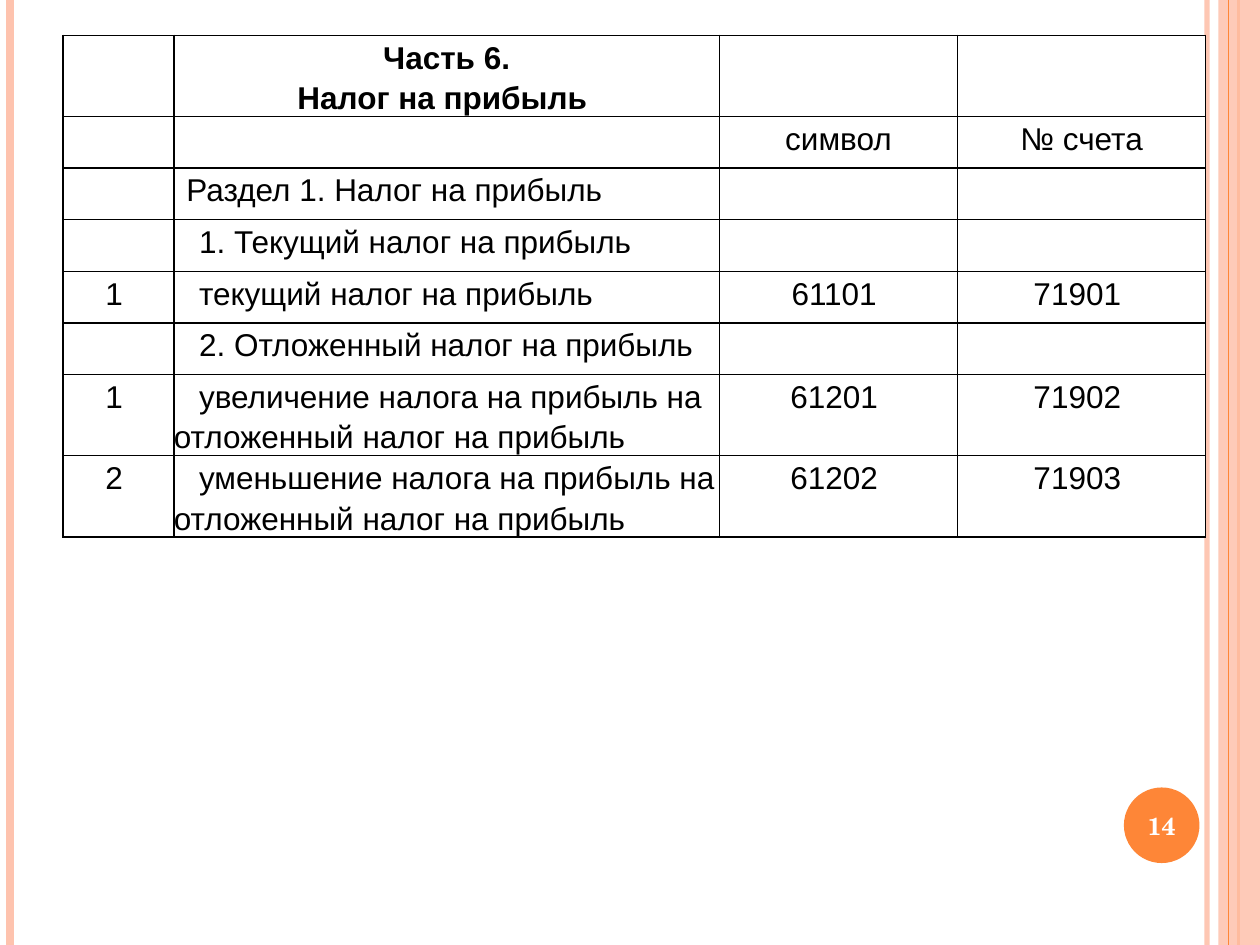
from lxml import etree
from pptx import Presentation
from pptx import util as u
from pptx.dml.color import RGBColor
from pptx.enum import shapes, text
from pptx.oxml.ns import qn

BLACK = RGBColor(0x00, 0x00, 0x00)
WHITE = RGBColor(0xFF, 0xFF, 0xFF)
PEACH = RGBColor(0xFE, 0xC3, 0xAE)
ORANGE = RGBColor(0xFE, 0x86, 0x37)

WIDTH, HEIGHT = u.Inches(10), u.Inches(7.5)
COLUMNS = (0.88, 4.33, 1.89, 1.97)
ROW_HEIGHT = 0.41
# Each row: number, name, first-line indent of the name (None = heading), symbol, account
ROWS = (
    ("", "Часть 6.\nНалог на прибыль ", None, "", ""),
    ("", "", 0, "символ", "№ счета"),
    ("", "Раздел 1. Налог на прибыль", 0.1, "", ""),
    ("", "1. Текущий налог на прибыль", 0.2, "", ""),
    ("1 ", "текущий налог на прибыль", 0.2, "61101 ", "71901 "),
    ("", "2. Отложенный налог на прибыль", 0.2, "", ""),
    ("1 ", "увеличение налога на прибыль на отложенный налог на прибыль", 0.2,
     "61201 ", "71902 "),
    ("2 ", "уменьшение налога на прибыль на отложенный налог на прибыль", 0.2,
     "61202 ", "71903 "),
)


def set_alpha(element, percent):
    """Make the first solid colour inside the element partly transparent."""
    clr = next(element.iter(qn("a:srgbClr")))
    etree.SubElement(clr, qn("a:alpha")).set("val", str(percent * 1000))


def add_stripe(s, x, color, width, alpha=None):
    """Draw a vertical line over the full slide height, x inches from the left."""
    line = s.shapes.add_connector(
        shapes.MSO_CONNECTOR.STRAIGHT, u.Inches(x), 0, u.Inches(x), HEIGHT)
    line.line.color.rgb = color
    line.line.width = u.Pt(width)
    props = line._element.spPr
    if alpha:
        set_alpha(props, alpha)
    etree.SubElement(props, qn("a:effectLst"))


def add_solid(s, kind, left, top, width, height, color):
    sp = s.shapes.add_shape(kind, left, top, width, height)
    sp.shadow.inherit = False
    sp.fill.solid()
    sp.fill.fore_color.rgb = color
    sp.line.fill.background()
    return sp


def add_side_stripes(s):
    add_stripe(s, 9.58, PEACH, 3, alpha=93)
    add_stripe(s, 0.08, PEACH, 4.5)
    add_stripe(s, 9.83, ORANGE, 1.5)
    band = add_solid(s, shapes.MSO_SHAPE.RECTANGLE,
                     u.Inches(9.67), 0, u.Inches(0.33), HEIGHT, PEACH)
    set_alpha(band._element.spPr, 87)
    add_stripe(s, 9.75, ORANGE, 0.75)


def add_page_number(s, left, top, size, number):
    """Place a round badge with the slide number centred on it."""
    add_solid(s, shapes.MSO_SHAPE.OVAL, left, top, size, size, ORANGE)
    margin = u.Inches(0.03)
    box = s.shapes.add_textbox(left - margin, top + margin // 2,
                               size + 2 * margin, size - margin)
    tf = box.text_frame
    tf.word_wrap = True
    tf.vertical_anchor = text.MSO_ANCHOR.MIDDLE
    p = tf.paragraphs[0]
    p.text = number
    p.alignment = text.PP_ALIGN.CENTER
    format_font(p.font, "TeX Gyre Schola", 14, WHITE, True)


def format_font(font, name, size, color, bold):
    font.name, font.size, font.bold = name, u.Pt(size), bold
    font.color.rgb = color


def add_borders(cell):
    """Give a cell a thin black border; must run before the cell is filled."""
    props = cell._tc.get_or_add_tcPr()
    for side in ("a:lnL", "a:lnR", "a:lnT", "a:lnB"):
        ln = etree.SubElement(props, qn(side), w=str(u.Pt(1)))
        fill = etree.SubElement(ln, qn("a:solidFill"))
        etree.SubElement(fill, qn("a:srgbClr"), val=str(BLACK))


def fill_cell(cell, content, indent=None):
    """Write a cell: centred without an indent, else left with that first-line indent."""
    add_borders(cell)
    cell.fill.solid()
    cell.fill.fore_color.rgb = WHITE
    cell.margin_left = cell.margin_right = cell.margin_top = cell.margin_bottom = 0
    cell.text = content
    for p in cell.text_frame.paragraphs:
        p.line_spacing = 1.15
        if indent is None:
            p.alignment = text.PP_ALIGN.CENTER
        else:
            p.alignment = text.PP_ALIGN.LEFT
            p._p.get_or_add_pPr().set("indent", str(u.Inches(indent)))
        format_font(p.font, "Arial", 18, BLACK, False)


def add_tax_table(s, left, top):
    table = s.shapes.add_table(
        len(ROWS), len(COLUMNS), left, top,
        u.Inches(sum(COLUMNS)), u.Inches(ROW_HEIGHT * len(ROWS))).table
    table.first_row = table.horz_banding = False
    for column, width in zip(table.columns, COLUMNS):
        column.width = u.Inches(width)
    for row, (number, name, indent, symbol, account) in zip(table.rows, ROWS):
        row.height = u.Inches(ROW_HEIGHT)
        for cell, content in zip(row.cells, (number, name, symbol, account)):
            fill_cell(cell, content, indent if content == name else None)
    for p in table.cell(0, 1).text_frame.paragraphs:
        p.font.bold = True


def main():
    prs = Presentation()
    prs.slide_width, prs.slide_height = WIDTH, HEIGHT
    s = prs.slides.add_slide(prs.slide_layouts[6])
    add_side_stripes(s)
    add_tax_table(s, u.Inches(0.5), u.Inches(0.28))
    add_page_number(s, u.Inches(8.92), u.Inches(6.25), u.Inches(0.6), "14")
    prs.save("out.pptx")


if __name__ == "__main__":
    main()
